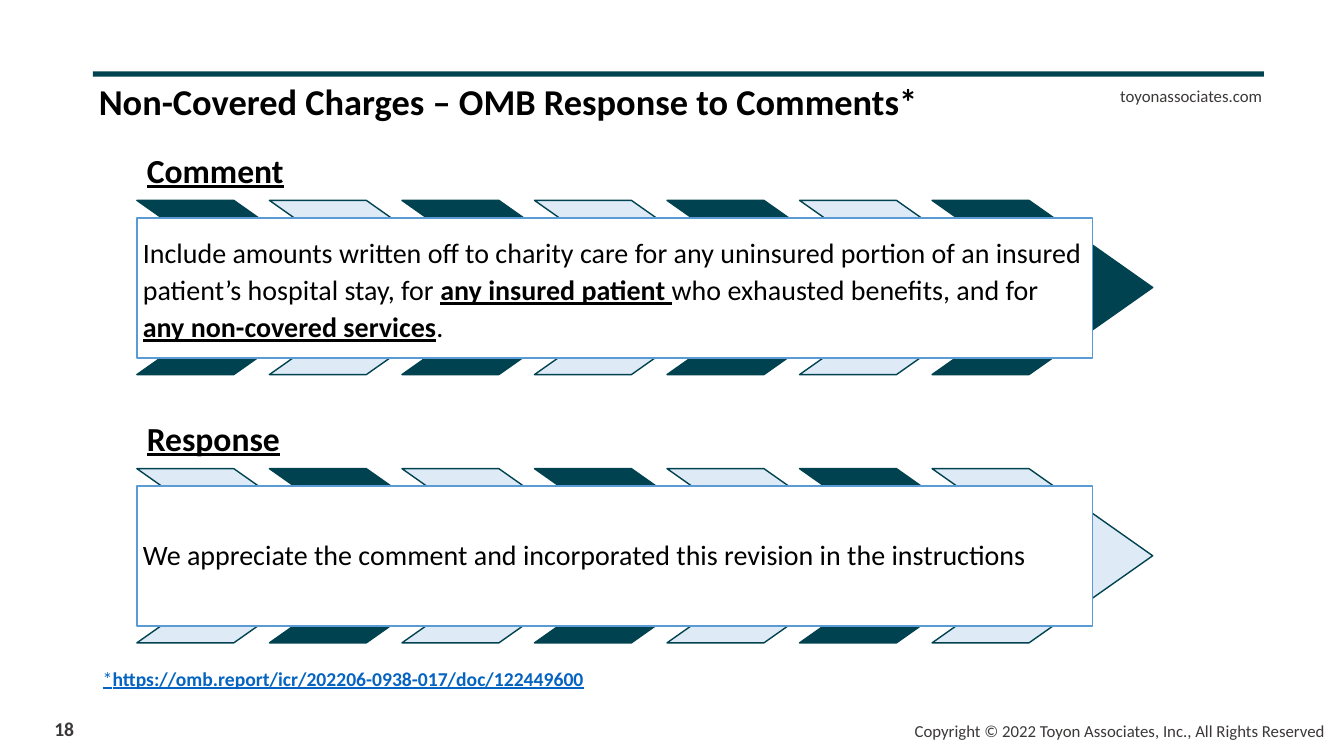
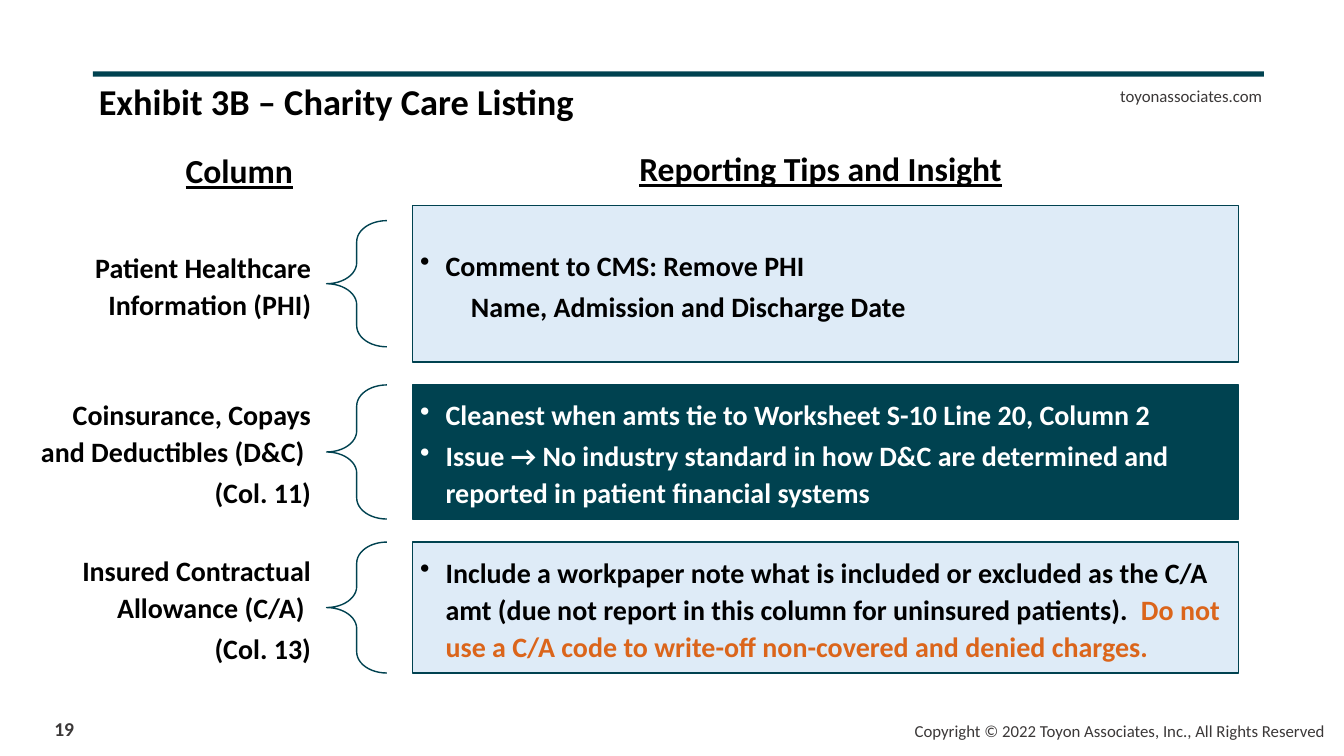
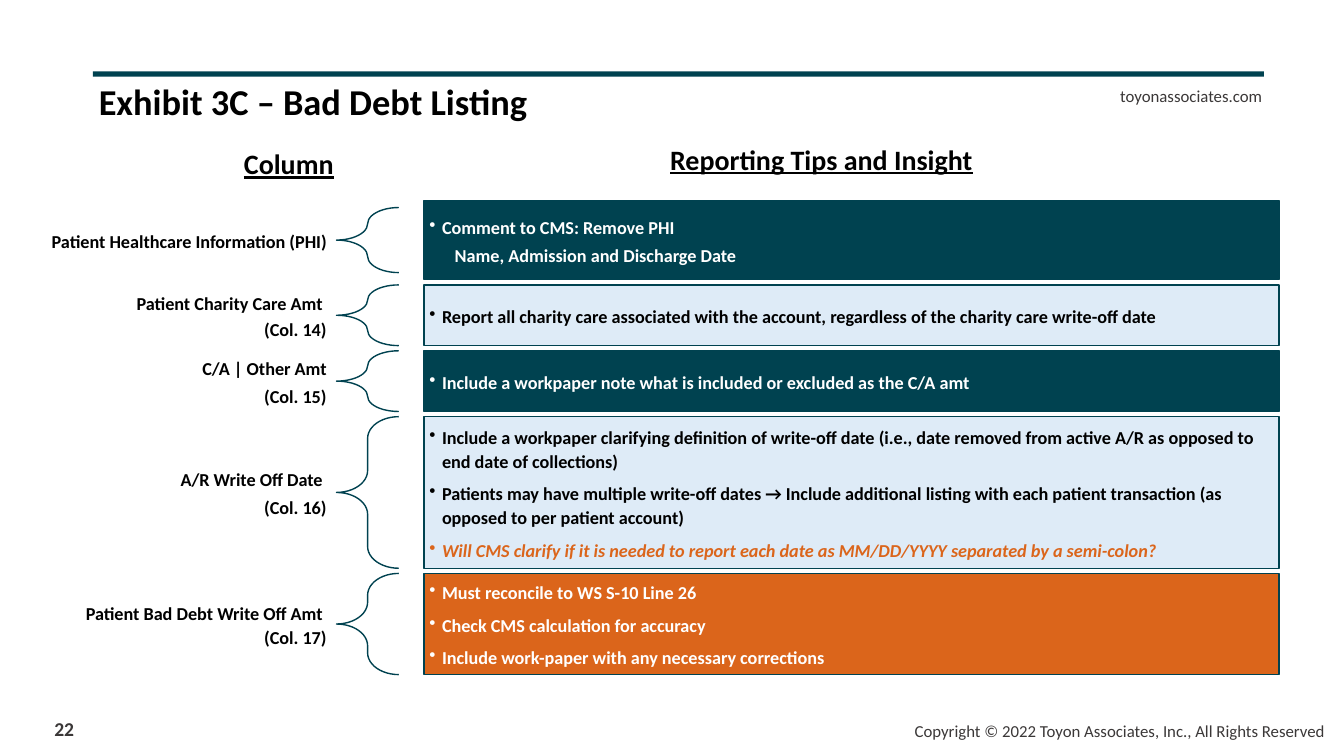
"""Build three slides on charity care and bad debt reporting."""
from lxml import etree
from pptx import Presentation
from pptx.dml.color import RGBColor
from pptx.enum.shapes import MSO_SHAPE
from pptx.enum.text import MSO_ANCHOR, PP_ALIGN
from pptx.oxml.ns import qn
from pptx.util import Cm, Pt

RECT, CHEVRON, BRACE = MSO_SHAPE.RECTANGLE, MSO_SHAPE.CHEVRON, MSO_SHAPE.LEFT_BRACE
LEFT, CENTER, RIGHT = PP_ALIGN.LEFT, PP_ALIGN.CENTER, PP_ALIGN.RIGHT
TOP, MIDDLE, BOTTOM = MSO_ANCHOR.TOP, MSO_ANCHOR.MIDDLE, MSO_ANCHOR.BOTTOM

HUES = {"teal": "004250", "pale": "DEEBF7", "orange": "DB651B", "white": "FFFFFF",
        "black": "000000", "gray": "3B3838", "edge": "5B9BD5", "link": "0563C1"}
PLAIN = {"name": "Calibri", "size": Pt(20), "hue": "black"}
BOLD = {**PLAIN, "bold": True}
SMALL = {**PLAIN, "size": Pt(12), "hue": "gray"}
HEAD = {**BOLD, "size": Pt(24), "underline": True}
STRESS = {"bold": True, "underline": True}
WARN = {"hue": "orange"}


def draw(slide, kind, box, fill=None, edge=None, bends=()):
    """Add a preset shape, or a text box when kind is None; box is in centimetres."""
    place = [Cm(n) for n in box]
    if kind is None:
        return slide.shapes.add_textbox(*place)
    shape = slide.shapes.add_shape(kind, *place)
    shape.shadow.inherit = False
    for spot, bend in enumerate(bends):
        shape.adjustments[spot] = bend
    if fill:
        shape.fill.solid()
        shape.fill.fore_color.rgb = RGBColor.from_string(HUES[fill])
    else:
        shape.fill.background()
    if edge:
        shape.line.color.rgb = RGBColor.from_string(HUES[edge])
        shape.line.width = Pt(1)
    else:
        shape.line.fill.background()
    return shape


def write(shape, paras, look, align=LEFT, anchor=MIDDLE, pad=(0.25, 0.13), step=0):
    """Fill a shape with (runs, line spacing, points after, level) paragraphs."""
    frame = shape.text_frame
    across, down = Cm(pad[0]), Cm(pad[1])
    form = {"word_wrap": True, "vertical_anchor": anchor, "margin_left": across,
            "margin_right": across, "margin_top": down, "margin_bottom": down}
    for key, value in form.items():
        setattr(frame, key, value)
    for spot, (runs, line, after, level) in enumerate(paras):
        para = frame.add_paragraph() if spot else frame.paragraphs[0]
        form = {"alignment": align, "line_spacing": line, "space_after": Pt(after)}
        for key, value in form.items():
            setattr(para, key, value)
        if level:
            props = para._p.get_or_add_pPr()
            props.set("marL", str(Cm(step * level)))
            props.set("indent", str(Cm(-step if level == 1 else 0)))
            if level == 1:
                etree.SubElement(props, qn("a:buChar")).set("char", "•")
        for text, change in [(runs, {})] if isinstance(runs, str) else runs:
            run = para.add_run()
            run.text = text
            style = {**look, **change}
            run.font.color.rgb = RGBColor.from_string(HUES[style.pop("hue")])
            for key, value in style.items():
                setattr(run.font, key, value)


deck = Presentation()
deck.slide_width, deck.slide_height = Cm(33.87), Cm(19.05)
pages = []
for title, number in [("Non-Covered Charges – OMB Response to Comments*", "18"),
                      ("Exhibit 3B – Charity Care Listing", "19"),
                      ("Exhibit 3C – Bad Debt Listing", "22")]:
    page = deck.slides.add_slide(deck.slide_layouts[6])
    pages.append(page)
    draw(page, RECT, (2.34, 1.8, 29.51, 0.13), "teal")
    for box, text, look, align, anchor in [
            ((24.92, 2.03, 7.14, 0.76), "toyonassociates.com", SMALL, RIGHT, MIDDLE),
            ((0.64, 17.93, 1.96, 0.86), number,
             {**SMALL, "size": Pt(14), "bold": True}, CENTER, MIDDLE),
            ((20.32, 18.03, 13.33, 0.76),
             "Copyright © 2022 Toyon Associates, Inc., All Rights Reserved",
             SMALL, RIGHT, MIDDLE),
            ((2.24, 1.98, 22.94, 1.35), title, {**BOLD, "size": Pt(26)}, LEFT, TOP)]:
        line = 0.9 if text == title else 1.0
        write(draw(page, None, box), [(text, line, 0, 0)], look, align, anchor)

page = pages[0]
comment = [
    ("Include amounts written off to charity care for any uninsured portion of an "
     "insured patient’s hospital stay, for ", {}),
    ("any insured patient ", STRESS),
    ("who exhausted benefits, and for ", {}),
    ("any non-covered services", STRESS),
    (".", {})]
reply = "We appreciate the comment and incorporated this revision in the instructions"
for top, head, body, line, fills in [
        (5.05, "Comment", comment, 1.1, ("teal", "pale")),
        (11.81, "Response", reply, 0.9, ("pale", "teal"))]:
    write(draw(page, None, (3.45, top - 2.16, 23.77, 2.16)), [(head, 0.9, 8.4, 0)],
          HEAD, anchor=BOTTOM, pad=(0.25, 0.25))
    for spot in range(7):
        draw(page, CHEVRON, (3.45 + 3.34 * spot, top, 5.56, 4.39),
             fills[spot % 2], "teal", [0.71])
    panel = draw(page, RECT, (3.45, top + 0.44, 24.08, 3.53), "white", "edge")
    write(panel, [(body, line, 7, 0)], PLAIN, pad=(0.15, 0.15))
source = [("*", {}), ("https://omb.report/icr/202206-0938-017/doc/122449600", {"bold": True})]
write(draw(page, None, (2.34, 16.61, 27.91, 0.89)), [(source, 1.1, 10, 0)],
      {**PLAIN, "size": Pt(14), "hue": "link", "underline": True}, anchor=TOP)

charity = [
    (3.94, "pale", "black",
     [("Patient Healthcare Information (PHI)", 1.1, 7, 0)],
     [("Comment to CMS: Remove PHI", 1.1, 3, 1),
      ("Name, Admission and Discharge Date", 1.1, 3, 2)]),
    (3.38, "teal", "white",
     [("Coinsurance, Copays and Deductibles (D&C) ", 1.1, 3, 0), ("(Col. 11)", 1.1, 3, 0)],
     [("Cleanest when amts tie to Worksheet S-10 Line 20, Column 2", 1.1, 3, 1),
      ("Issue → No industry standard in how D&C are determined and reported in "
       "patient financial systems", 1.1, 3, 1)]),
    (3.3, "pale", "black",
     [("Insured Contractual Allowance (C/A) ", 1.1, 3, 0), ("(Col. 13)", 1.1, 3, 0)],
     [([("Include a workpaper note what is included or excluded as the C/A amt (due not "
         "report in this column for uninsured patients).  ", {}),
        ("Do not use a C/A code to write-off non-covered and denied charges.", WARN)],
       1.1, 3, 1)])]
debt = [
    (2, "teal", "white",
     [("Patient Healthcare Information (PHI)", 1.1, 4.5, 0)],
     [("Comment to CMS: Remove PHI", 1.1, 6, 1),
      ("Name, Admission and Discharge Date", 0.9, 2, 2)]),
    (1.53, "pale", "black",
     [("Patient Charity Care Amt ", 1.1, 4.5, 0), ("(Col. 14)", 0.9, 4.5, 0)],
     [("Report all charity care associated with the account, regardless of the charity "
       "care write-off date", 1.1, 2, 1)]),
    (1.53, "teal", "white",
     [("C/A | Other Amt", 1.1, 3, 0), ("(Col. 15)", 1.1, 3, 0)],
     [("Include a workpaper note what is included or excluded as the C/A amt", 1.1, 2, 1)]),
    (3.82, "pale", "black",
     [("A/R Write Off Date ", 1.1, 3, 0), ("(Col. 16)", 1.1, 3, 0)],
     [("Include a workpaper clarifying definition of write-off date (i.e., date removed "
       "from active A/R as opposed to end date of collections)", 1.1, 6, 1),
      ("Patients may have multiple write-off dates → Include additional listing with each "
       "patient transaction (as opposed to per patient account)", 1.1, 6, 1),
      ([("Will CMS clarify if it is needed to report each date as MM/DD/YYYY separated "
         "by a semi-colon?", {**WARN, "italic": True})], 1.1, 6, 1)]),
    (2.55, "orange", "white",
     [("Patient Bad Debt Write Off Amt ", 1.1, 3, 0), ("(Col. 17)", 0.9, 4.5, 0)],
     [("Must reconcile to WS S-10 Line 26", 1.1, 6, 1),
      ("Check CMS calculation for accuracy", 1.1, 6, 1),
      ("Include work-paper with any necessary corrections", 1.1, 6, 1)])]
grids = [
    {"rows": charity, "size": 20, "head": 24, "top": 5.18, "gap": 0.58, "trim": 0.38,
     "label": (0.58, 7.67), "brace": (8.23, 1.52), "panel": (10.39, 20.83),
     "pads": ((0.41, 0.15), (0.2, 0.2)), "step": 0.64,
     "heads": ((4.11, 3.66, 3.84, 1.27), (14.99, 3.61, 11.38, 1.27))},
    {"rows": debt, "size": 13, "head": 20, "top": 5.05, "gap": 0.13, "trim": 0.18,
     "label": (0.56, 7.92), "brace": (8.48, 1.57), "panel": (10.69, 21.54),
     "pads": ((0.25, 0.1), (0.13, 0.13)), "step": 0.32,
     "heads": ((5.36, 3.56, 3.84, 1.12), (15.01, 3.45, 11.38, 1.12))}]
for page, grid in zip(pages[1:], grids):
    for box, text in zip(grid["heads"], ("Column", "Reporting Tips and Insight")):
        write(draw(page, None, box), [(text, 1.0, 0, 0)],
              {**HEAD, "size": Pt(grid["head"])}, CENTER, TOP)
    look = {**BOLD, "size": Pt(grid["size"])}
    top, trim = grid["top"], grid["trim"]
    for high, fill, ink, label, tips in grid["rows"]:
        spots = {}
        for part in ("label", "brace", "panel"):
            left, wide = grid[part]
            spots[part] = (left, top, wide, high)
        write(draw(page, None, spots["label"]), label, look, RIGHT, pad=grid["pads"][0])
        left, _, wide, _ = spots["brace"]
        draw(page, BRACE, (left, top + trim, wide, high - 2 * trim), None, "teal", [0.35, 0.5])
        panel = draw(page, RECT, spots["panel"], fill, "teal")
        write(panel, tips, {**look, "hue": ink}, pad=grid["pads"][1], step=grid["step"])
        top += high + grid["gap"]
        trim = 0

deck.save("out.pptx")
